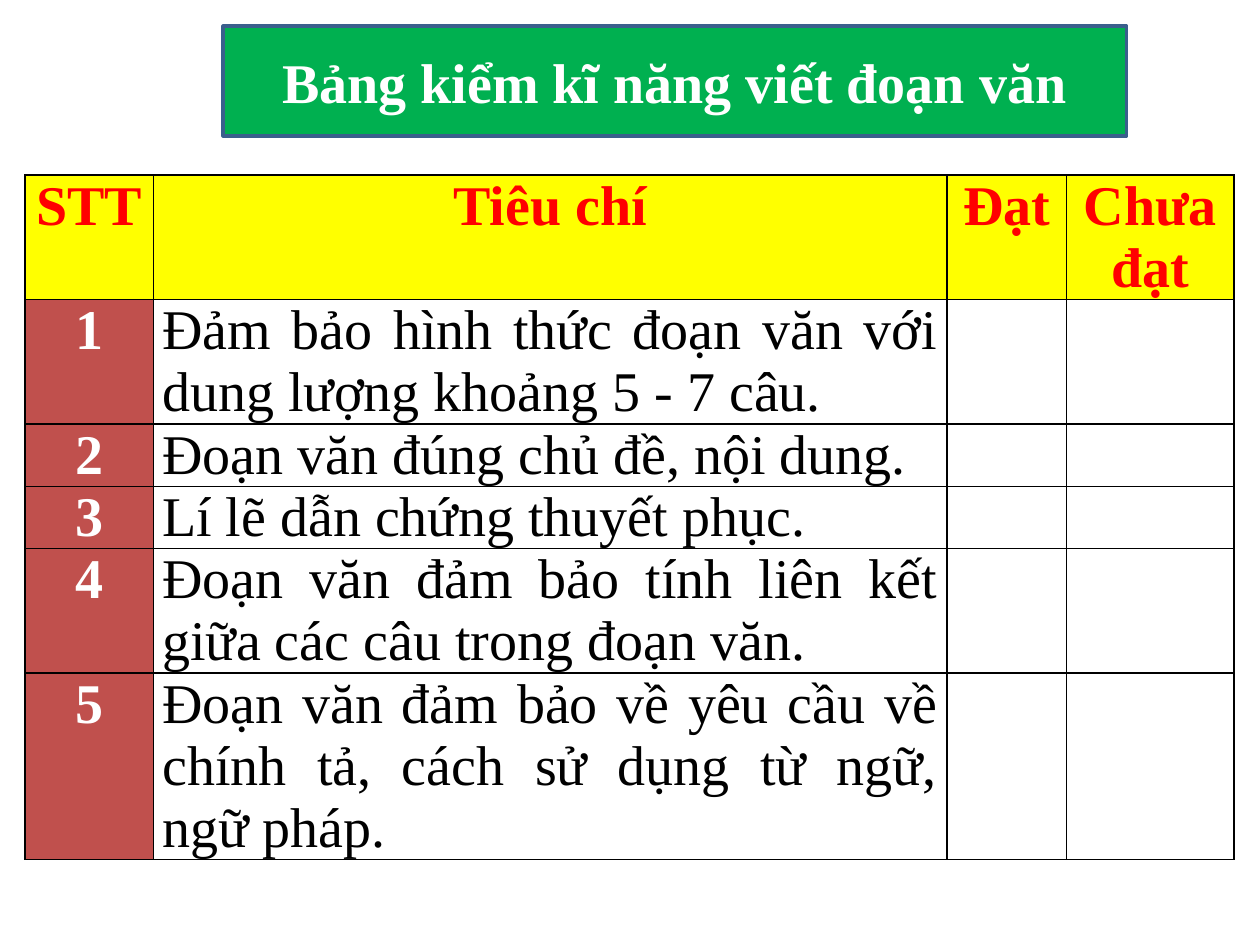
"""Builds a slide with a checklist for paragraph writing skills."""
from lxml import etree
from pptx import Presentation
from pptx.dml.color import RGBColor
from pptx.enum.shapes import MSO_SHAPE
from pptx.enum.text import MSO_ANCHOR, PP_ALIGN
from pptx.oxml.ns import qn
from pptx.util import Cm, Pt

RECTANGLE = MSO_SHAPE.RECTANGLE
MIDDLE = MSO_ANCHOR.MIDDLE
CENTER = PP_ALIGN.CENTER
JUSTIFY = PP_ALIGN.JUSTIFY

WHITE = RGBColor(0xFF, 0xFF, 0xFF)
BLACK = RGBColor(0x00, 0x00, 0x00)
RED = RGBColor(0xFF, 0x00, 0x00)
YELLOW = RGBColor(0xFF, 0xFF, 0x00)
GREEN = RGBColor(0x00, 0xB0, 0x50)
BRICK = RGBColor(0xC0, 0x50, 0x4D)
BLUE = RGBColor(0x3A, 0x5F, 0x8C)

HEADINGS = ["STT", "Tiêu chí", "Đạt", "Chưa đạt"]
CRITERIA = [
    ("Đảm bảo hình thức đoạn văn với dung lượng khoảng 5 - 7 câu.", 2),
    ("Đoạn văn đúng chủ đề, nội dung.", 1),
    ("Lí lẽ dẫn chứng thuyết phục.", 1),
    ("Đoạn văn đảm bảo tính liên kết giữa các câu trong đoạn văn.", 2),
    ("Đoạn văn đảm bảo về yêu cầu về chính tả, cách sử dụng từ ngữ, ngữ pháp.", 3),
]
COLUMN_WIDTHS = [2.59, 16, 2.41, 3.38]
LINE_HEIGHT = 1.25


def write_text(frame, text, color=WHITE, bold=True, align=CENTER):
    para = frame.paragraphs[0]
    para.alignment = align
    span = para.add_run()
    span.text = text
    span.font.name = "Times New Roman"
    span.font.size = Pt(32)
    span.font.bold = bold
    span.font.color.rgb = color


def add_borders(cell, color=BLACK, width=Pt(1)):
    properties = cell._tc.get_or_add_tcPr()
    for position, side in enumerate(("a:lnL", "a:lnR", "a:lnT", "a:lnB")):
        line = etree.Element(qn(side), w=str(width))
        fill = etree.SubElement(line, qn("a:solidFill"))
        etree.SubElement(fill, qn("a:srgbClr"), val=str(color))
        properties.insert(position, line)


class SlideBuilder:
    def __init__(self, page):
        self.page = page

    def banner(self, text, left, top, width, height):
        box = self.page.shapes.add_shape(
            RECTANGLE, Cm(left), Cm(top), Cm(width), Cm(height))
        box.shadow.inherit = False
        box.fill.solid()
        box.fill.fore_color.rgb = GREEN
        box.line.color.rgb = BLUE
        box.line.width = Pt(2)
        box.text_frame.word_wrap = True
        box.text_frame.vertical_anchor = MIDDLE
        write_text(box.text_frame, text)

    def cell(self, cell, text, fill, **style):
        cell.fill.solid()
        cell.fill.fore_color.rgb = fill
        cell.margin_left = cell.margin_right = Cm(0.18)
        cell.margin_top = cell.margin_bottom = 0
        if text:
            write_text(cell.text_frame, text, **style)
        add_borders(cell)

    def checklist(self, left, top):
        line_counts = [2] + [lines for _, lines in CRITERIA]
        table = self.page.shapes.add_table(
            len(line_counts), len(HEADINGS), Cm(left), Cm(top),
            Cm(sum(COLUMN_WIDTHS)), Cm(LINE_HEIGHT * sum(line_counts))).table
        for column, width in zip(table.columns, COLUMN_WIDTHS):
            column.width = Cm(width)
        for row, lines in zip(table.rows, line_counts):
            row.height = Cm(LINE_HEIGHT * lines)
        for column, heading in enumerate(HEADINGS):
            self.cell(table.cell(0, column), heading, YELLOW, color=RED)
        for number, (criterion, _) in enumerate(CRITERIA, start=1):
            self.cell(table.cell(number, 0), str(number), BRICK)
            self.cell(table.cell(number, 1), criterion, WHITE,
                      color=BLACK, bold=False, align=JUSTIFY)
            for column in (2, 3):
                self.cell(table.cell(number, column), "", WHITE)


def main():
    deck = Presentation()
    deck.slide_width, deck.slide_height = Cm(25.4), Cm(19.05)
    builder = SlideBuilder(deck.slides.add_slide(deck.slide_layouts[6]))
    builder.banner("Bảng kiểm kĩ năng viết đoạn văn", 4.5, 0.53, 18.21, 2.21)
    builder.checklist(0.5, 3.53)
    deck.save("out.pptx")


if __name__ == "__main__":
    main()
